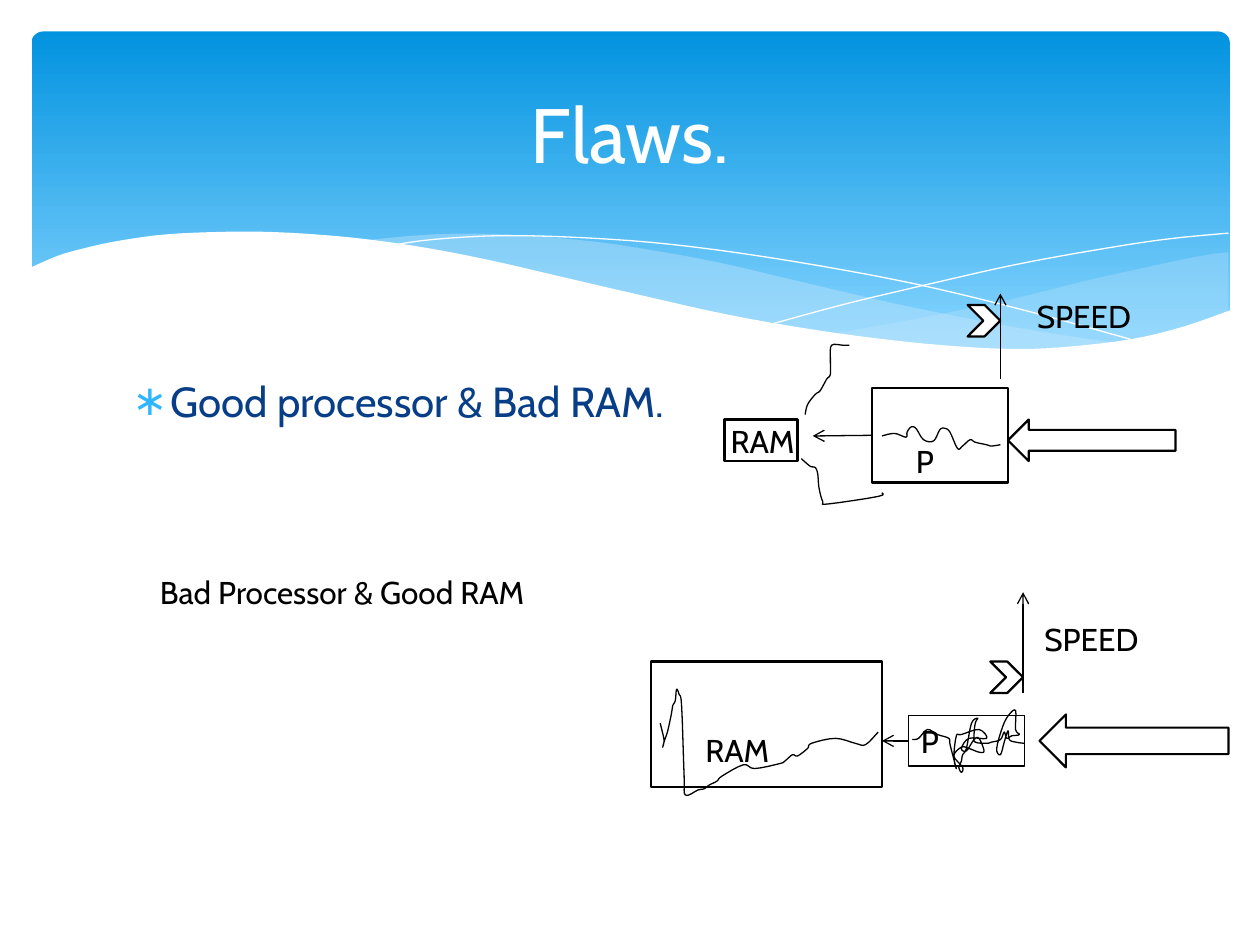
from dataclasses import dataclass
from typing import Optional

from lxml.etree import SubElement
from pptx import Presentation
from pptx.dml.color import RGBColor
from pptx.enum.shapes import MSO_CONNECTOR, MSO_SHAPE
from pptx.enum.text import MSO_ANCHOR, MSO_AUTO_SIZE, PP_ALIGN
from pptx.oxml.ns import qn
from pptx.util import Inches, Pt

FONT = "Cabin"
BLACK = RGBColor(0x00, 0x00, 0x00)
WHITE = RGBColor(0xFF, 0xFF, 0xFF)
NAVY = RGBColor(0x07, 0x3E, 0x87)
SKY = RGBColor(0x02, 0x93, 0xE0)
LIGHT_SKY = RGBColor(0x83, 0xD3, 0xFE)
PALE_BLUE = RGBColor(0xC6, 0xE7, 0xFC)
BULLET_BLUE = "31B6FD"
WIDTH, HEIGHT = Inches(10), Inches(7.5)
COLUMN, ROW = WIDTH // 1000, HEIGHT // 750
CURVE_STEPS = 4


@dataclass
class Box:
    left: int
    top: int

    def point(self, x, y):
        return round((self.left + x) * COLUMN), round((self.top + y) * ROW)

    def area(self, x, y, width, height):
        return (*self.point(x, y), width * COLUMN, height * ROW)


@dataclass
class Design:
    ram: tuple
    ram_label: tuple
    processor: tuple
    processor_label: Optional[tuple]
    input_arrow: tuple
    transfer_end: tuple
    speed_start: tuple
    speed_length: int
    chevron_top: int
    speed_label: tuple
    scribbles: list


GOOD_PROCESSOR = Design(
    (75, 133, 58, 33), (70, 130, 75, 40), (192, 108, 108, 75), (217, 146, 50, 40),
    (300, 133, 133, 33), (145, 146), (294, 101), 68, 42, (313, 31, 108, 40),
    [
        [(294, 153), (287, 154), (283, 153), (274, 151), (270, 149), (264, 154),
         (260, 156), (254, 143), (250, 140), (246, 141), (241, 150), (233, 149),
         (227, 140), (223, 139), (220, 143), (219, 147), (210, 144), (200, 146)],
        [(136, 164), (143, 170), (147, 171), (149, 176), (150, 187), (153, 198),
         (157, 200), (197, 194), (200, 191)],
        [(139, 129), (141, 121), (147, 113), (151, 110), (156, 101), (159, 97),
         (159, 84), (160, 74), (169, 74), (174, 74)],
    ])

BAD_PROCESSOR = Design(
    (17, 75, 183, 100), (50, 125, 106, 40), (221, 118, 92, 40), None,
    (325, 117, 150, 42), (200, 138), (312, 100), 80, 75, (319, 37, 108, 40),
    [
        [(313, 140), (306, 139), (301, 137), (300, 130), (297, 139), (294, 149),
         (291, 144), (296, 126), (301, 117), (306, 114), (306, 129), (309, 133),
         (303, 134), (299, 136), (297, 131), (294, 137), (287, 139), (283, 140),
         (274, 139), (273, 134), (274, 124), (276, 120), (271, 124), (267, 144),
         (264, 149), (263, 154), (261, 159), (263, 163), (264, 159), (257, 150),
         (263, 143), (269, 144), (277, 147), (281, 146), (277, 136), (273, 137),
         (267, 146), (263, 144), (269, 136), (283, 136), (277, 129), (263, 133),
         (259, 134), (257, 151), (259, 160), (254, 141), (253, 136), (244, 133),
         (236, 129), (229, 136), (224, 137)],
        [(197, 131), (187, 141), (179, 140), (163, 136), (144, 140), (141, 144),
         (133, 150), (129, 149), (123, 154), (119, 156), (99, 160), (90, 157),
         (73, 166), (69, 170), (63, 173), (59, 176), (54, 177), (44, 181),
         (43, 166), (41, 110), (39, 101), (37, 97), (36, 106), (34, 110),
         (33, 116), (30, 130), (27, 139), (26, 143), (27, 137), (24, 124)],
    ])


def smooth(points):
    padded = [points[0], *points, points[-1]]
    result = [points[0]]
    for a, b, c, d in zip(padded, padded[1:], padded[2:], padded[3:]):
        for step in range(1, CURVE_STEPS + 1):
            t = step / CURVE_STEPS
            result.append(tuple(
                (2 * q + (r - p) * t + (2 * p - 5 * q + 4 * r - s) * t ** 2
                 + (3 * q - p - 3 * r + s) * t ** 3) / 2
                for p, q, r, s in zip(a, b, c, d)))
    return result


def paint(shape, fill=None, line=None, width=0.75):
    shape.shadow.inherit = False
    if fill is None:
        shape.fill.background()
    else:
        shape.fill.solid()
        shape.fill.fore_color.rgb = fill
    if line is None:
        shape.line.fill.background()
    else:
        shape.line.color.rgb = line
        shape.line.width = Pt(width)


def add_curve(slide, box, curves, closed=False, fill=None, line=None, width=0.75, opacity=None):
    points = [box.point(x, y) for curve in curves for x, y in smooth(curve)]
    builder = slide.shapes.build_freeform(*points[0])
    builder.add_line_segments(points[1:], close=closed)
    shape = builder.convert_to_shape()
    paint(shape, fill, line, width)
    if opacity:
        color = shape.element.spPr.find(qn("a:solidFill")).find(qn("a:srgbClr"))
        SubElement(color, qn("a:alpha"), val=str(opacity * 1000))


def add_block(slide, box, kind, area, fill=WHITE, line=BLACK, width=1.25):
    shape = slide.shapes.add_shape(kind, *box.area(*area))
    paint(shape, fill, line, width)
    return shape


def write(shape, text, size=18, color=BLACK, align=PP_ALIGN.LEFT, anchor=MSO_ANCHOR.TOP,
          auto_size=MSO_AUTO_SIZE.SHAPE_TO_FIT_TEXT):
    frame = shape.text_frame
    frame.text = text
    frame.word_wrap = True
    frame.auto_size = auto_size
    frame.vertical_anchor = anchor
    paragraph = frame.paragraphs[0]
    paragraph.alignment = align
    font = paragraph.runs[0].font
    font.name, font.size, font.color.rgb = FONT, Pt(size), color
    return paragraph


def add_label(slide, box, area, text):
    write(slide.shapes.add_textbox(*box.area(*area)), text)


def add_arrow(slide, box, start, end, source=None):
    arrow = slide.shapes.add_connector(
        MSO_CONNECTOR.STRAIGHT, *box.point(*start), *box.point(*end))
    if source is not None:
        arrow.begin_connect(source, 1)
    arrow.line.color.rgb = BLACK
    arrow.line.width = Pt(0.75)
    SubElement(arrow.line._get_or_add_ln(), qn("a:tailEnd"), type="arrow")
    SubElement(arrow.element.spPr, qn("a:effectLst"))


def draw_header(slide, box):
    panel = add_block(slide, box, MSO_SHAPE.ROUNDED_RECTANGLE, (25, 25, 951, 270), line=None)
    panel.adjustments[0] = 0.034
    panel.fill.gradient()
    panel.fill.gradient_angle = 270
    for stop, color, position in zip(panel.fill.gradient_stops, (SKY, LIGHT_SKY), (0, 0.9)):
        stop.color.rgb, stop.position = color, position
    right_wave = [
        [(975, 200), (948, 204), (906, 213), (861, 223), (805, 237), (753, 248),
         (706, 257), (661, 265)],
        [(661, 265), (705, 271), (757, 276), (803, 278), (854, 276), (897, 270),
         (935, 262), (975, 247)]]
    middle_wave = [
        [(893, 273), (837, 265), (775, 254), (706, 240), (629, 222), (569, 208),
         (514, 198), (465, 191), (399, 186), (344, 186), (286, 191)],
        [(286, 191), (342, 199), (404, 211), (449, 222), (530, 240), (601, 255),
         (665, 266), (722, 274), (785, 278), (838, 278), (893, 273)]]
    for wave, opacity in ((right_wave, 29), (middle_wave, 40)):
        add_curve(slide, box, wave, True, PALE_BLUE, opacity=opacity)
    for strand in (
            [(309, 195), (344, 190), (401, 187), (469, 189), (533, 194), (608, 204),
             (695, 219), (760, 233), (831, 251), (907, 272)],
            [(613, 257), (672, 241), (748, 223), (806, 210), (866, 199), (924, 190),
             (975, 185)]):
        add_curve(slide, box, [strand], line=WHITE, width=0)
    white_edge = [
        (977, 246), (940, 259), (899, 269), (850, 275), (809, 277), (761, 275),
        (708, 270), (648, 262), (579, 250), (503, 233), (447, 220), (391, 207),
        (340, 197), (292, 190), (250, 186), (211, 184), (177, 184), (132, 186),
        (95, 191), (67, 197), (46, 203), (23, 213)]
    add_curve(slide, box, [white_edge, [(23, 213), (23, 329)], [(23, 329), (977, 329)]],
              True, WHITE)


def fill_placeholders(slide, box):
    title, body = slide.shapes.title, slide.placeholders[1]
    for placeholder, area in ((body, (95, 293, 810, 49)), (title, (50, 37, 900, 137))):
        slide.shapes.element.append(placeholder.element)
        placeholder.left, placeholder.top, placeholder.width, placeholder.height = box.area(*area)
    write(title, "Flaws.", 44, WHITE, PP_ALIGN.CENTER, MSO_ANCHOR.MIDDLE, MSO_AUTO_SIZE.NONE)
    paragraph = write(body, "Good processor & Bad RAM.", 24, NAVY, auto_size=MSO_AUTO_SIZE.NONE)
    properties = paragraph._p.get_or_add_pPr()
    properties.set("marL", str(Inches(0.3)))
    properties.set("indent", str(-Inches(0.3)))
    SubElement(SubElement(properties, qn("a:buClr")), qn("a:srgbClr"), val=BULLET_BLUE)
    SubElement(properties, qn("a:buFont"), typeface=FONT)
    SubElement(properties, qn("a:buChar"), char="∗")


def draw_diagram(slide, box, design):
    add_block(slide, box, MSO_SHAPE.LEFT_ARROW, design.input_arrow)
    add_block(slide, box, MSO_SHAPE.RECTANGLE, design.ram)
    add_label(slide, box, design.ram_label, "RAM")
    if design.processor_label:
        processor = add_block(slide, box, MSO_SHAPE.RECTANGLE, design.processor)
        add_label(slide, box, design.processor_label, "P")
    else:
        processor = add_block(slide, box, MSO_SHAPE.RECTANGLE, design.processor, None, width=0.75)
        write(processor, "P")
    add_arrow(slide, box, design.processor[:2], design.transfer_end, processor)
    for scribble in design.scribbles:
        add_curve(slide, box, [scribble], line=BLACK)
    x, y = design.speed_start
    add_arrow(slide, box, (x, y), (x, y - design.speed_length))
    add_block(slide, box, MSO_SHAPE.CHEVRON, (x - 26, design.chevron_top, 26, 25))
    add_label(slide, box, design.speed_label, "SPEED")


def main():
    presentation = Presentation()
    presentation.slide_width, presentation.slide_height = WIDTH, HEIGHT
    slide = presentation.slides.add_slide(presentation.slide_layouts[1])
    page = Box(0, 0)
    draw_header(slide, page)
    fill_placeholders(slide, page)
    draw_diagram(slide, Box(500, 200), GOOD_PROCESSOR)
    caption = add_block(slide, page, MSO_SHAPE.RECTANGLE, (117, 450, 453, 40), None, WHITE, 0.75)
    write(caption, "Bad Processor & Good RAM")
    draw_diagram(slide, Box(500, 450), BAD_PROCESSOR)
    presentation.save("out.pptx")


if __name__ == "__main__":
    main()
